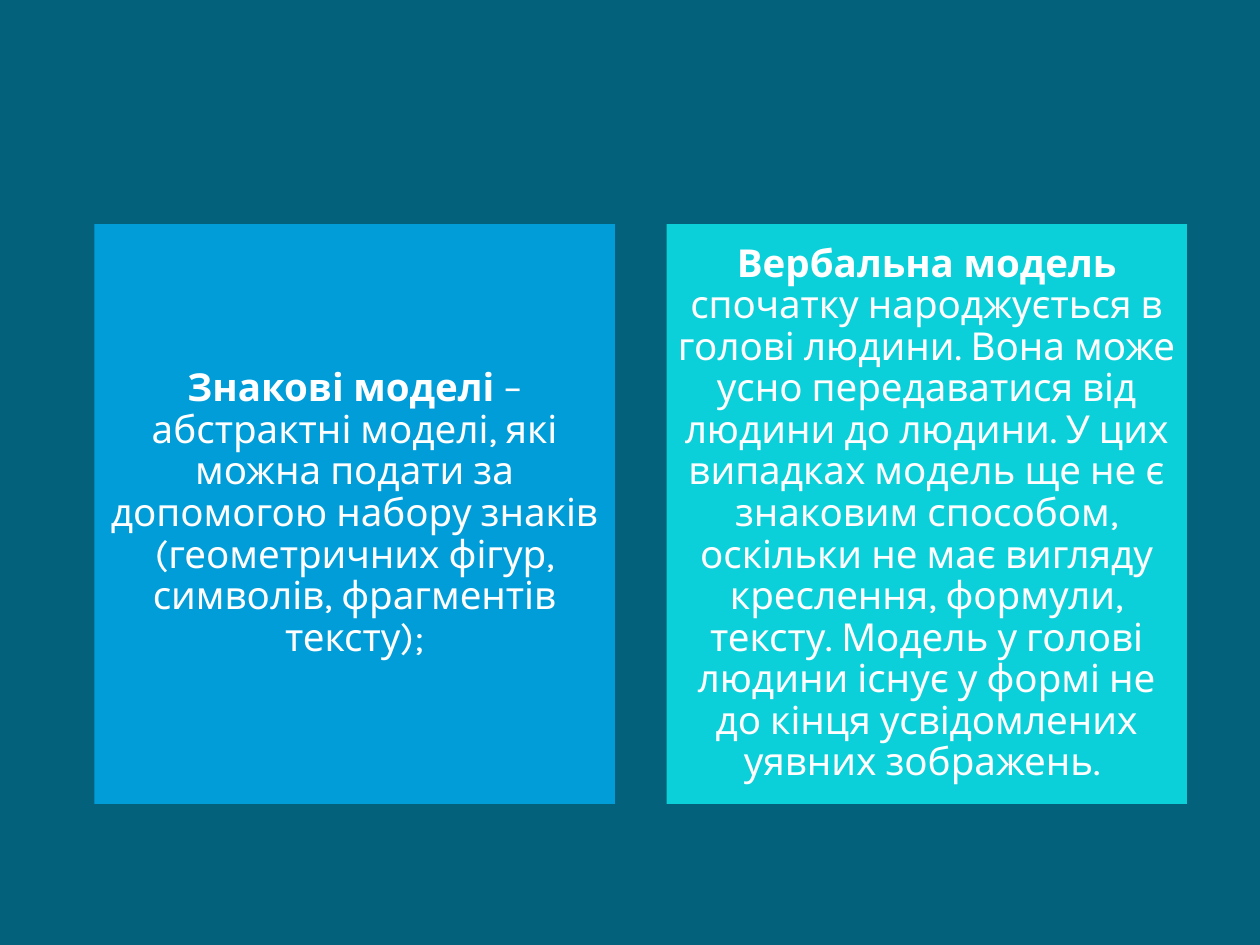
"""Build a slide with two cards comparing symbolic and verbal models."""
from pptx import Presentation
from pptx import util as u
from pptx.dml.color import RGBColor
from pptx.enum import shapes, text


def paint(fill, color):
    fill.solid()
    fill.fore_color.rgb = RGBColor.from_string(color)


prs = Presentation()
prs.slide_width, prs.slide_height = u.Inches(10), u.Inches(7.5)
s = prs.slides.add_slide(prs.slide_layouts[6])
paint(s.background.fill, "04617B")

cards = [
    ("009DD9", "Знакові моделі",
     " – абстрактні моделі, які можна подати за допомогою набору знаків "
     "(геометричних фігур, символів, фрагментів тексту);"),
    ("0BD0D9", "Вербальна модель ",
     "спочатку народжується в голові людини. Вона може усно передаватися "
     "від людини до людини. У цих випадках модель ще не є знаковим способом, "
     "оскільки не має вигляду креслення, формули, тексту. Модель у голові "
     "людини існує у формі не до кінця усвідомлених уявних зображень. "),
]
left, top, width, height, gap = 0.75, 1.78, 4.13, 4.6, 0.41

for i, (color, term, definition) in enumerate(cards):
    sp = s.shapes.add_shape(
        shapes.MSO_SHAPE.RECTANGLE, u.Inches(left + i * (width + gap)),
        u.Inches(top), u.Inches(width), u.Inches(height))
    sp.shadow.inherit = False
    paint(sp.fill, color)
    sp.line.fill.background()
    tf = sp.text_frame
    tf.word_wrap = True
    tf.vertical_anchor = text.MSO_ANCHOR.MIDDLE
    tf.margin_left = tf.margin_right = u.Inches(0.09)
    tf.margin_top = tf.margin_bottom = u.Inches(0.09)
    p = tf.paragraphs[0]
    p.alignment = text.PP_ALIGN.CENTER
    p.line_spacing = 0.9
    for words, bold in ((term, True), (definition, False)):
        r = p.add_run()
        r.text = words
        r.font.name = "Karla"
        r.font.size = u.Pt(22)
        r.font.bold = bold
        paint(r.font.fill, "FFFFFF")

prs.save("out.pptx")
